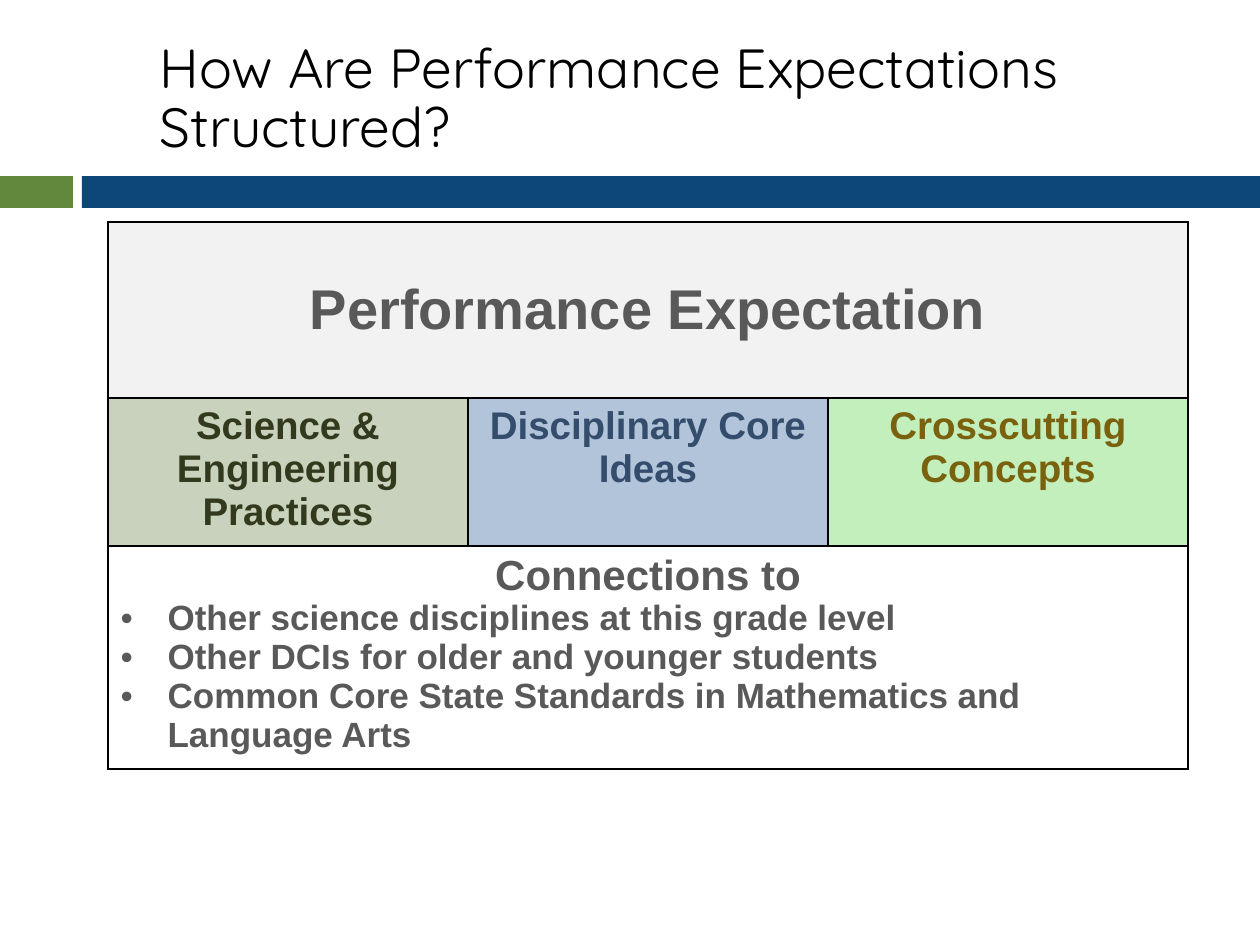
from lxml.etree import SubElement
from pptx import Presentation
from pptx.dml.color import RGBColor
from pptx.enum.shapes import MSO_SHAPE
from pptx.enum.text import MSO_ANCHOR, MSO_AUTO_SIZE, PP_ALIGN
from pptx.oxml.ns import qn
from pptx.util import Pt

PX = 914400 // 126
COLORS = {
    "title": "000000", "border": "000000", "green_bar": "61893C", "blue_bar": "0D4679",
    "text": "595959", "gray": "F2F2F2", "white": "FFFFFF",
    "practices": "C8D2BC", "practices_text": "33391C",
    "ideas": "B1C4DA", "ideas_text": "344D6C",
    "concepts": "C2EFBB", "concepts_text": "7A610D",
}
PILLARS = [
    ("Science & Engineering Practices", "practices"),
    ("Disciplinary Core Ideas", "ideas"),
    ("Crosscutting Concepts", "concepts"),
]
CONNECTIONS = [
    "Other science disciplines at this grade level",
    "Other DCIs for older and younger students",
    "Common Core State Standards in Mathematics and Language Arts",
]


def rgb(name):
    return RGBColor.from_string(COLORS[name])


def write(p, text, size, color="text", font="Arial", bold=True, align=PP_ALIGN.CENTER):
    p.alignment = align
    r = p.add_run()
    r.text = text
    r.font.size = Pt(size)
    r.font.name = font
    r.font.bold = bold
    r.font.color.rgb = rgb(color)


def add_bullet(p, indent, color="text"):
    pPr = p._p.get_or_add_pPr()
    pPr.set("marL", str(indent * PX))
    pPr.set("indent", str(-indent * PX))
    clr = SubElement(pPr, qn("a:buClr"))
    SubElement(clr, qn("a:srgbClr"), val=COLORS[color])
    SubElement(pPr, qn("a:buFont"), typeface="Arial")
    SubElement(pPr, qn("a:buChar"), char="•")


def set_borders(cell, color="border", width=1):
    tcPr = cell._tc.get_or_add_tcPr()
    for i, side in enumerate(("a:lnL", "a:lnR", "a:lnT", "a:lnB")):
        ln = tcPr.makeelement(qn(side), {"w": str(Pt(width))})
        fill = SubElement(ln, qn("a:solidFill"))
        SubElement(fill, qn("a:srgbClr"), val=COLORS[color])
        tcPr.insert(i, ln)  # borders must precede the cell fill


class SlideBuilder:
    def __init__(self, prs):
        self.slide = prs.slides.add_slide(prs.slide_layouts[5])

    def bar(self, x, y, w, h, color):
        sp = self.slide.shapes.add_shape(MSO_SHAPE.RECTANGLE, x * PX, y * PX, w * PX, h * PX)
        sp.shadow.inherit = False
        sp.fill.solid()
        sp.fill.fore_color.rgb = rgb(color)
        sp.line.fill.background()

    def title(self, text, x, y, w, h):
        sp = self.slide.shapes.title
        sp.left, sp.top, sp.width, sp.height = (v * PX for v in (x, y, w, h))
        tf = sp.text_frame
        tf.word_wrap = True
        tf.auto_size = MSO_AUTO_SIZE.NONE
        tf.vertical_anchor = MSO_ANCHOR.MIDDLE
        p = tf.paragraphs[0]
        p.line_spacing = 0.9
        write(p, text, 31.5, "title", font="Quicksand", bold=False, align=PP_ALIGN.LEFT)

    def table(self, x, y, col_width, cols, row_heights):
        table = self.slide.shapes.add_table(
            len(row_heights), cols, x * PX, y * PX,
            cols * col_width * PX, sum(row_heights) * PX).table
        for col in table.columns:
            col.width = col_width * PX
        for row, height in zip(table.rows, row_heights):
            row.height = height * PX
        for cell in table.iter_cells():
            set_borders(cell)
        return table

    def cell(self, table, row, col, fill, span=1):
        """Fill a cell, merged over span columns, and return its text frame."""
        cell = table.cell(row, col)
        if span > 1:
            cell.merge(table.cell(row, col + span - 1))
        cell.fill.solid()
        cell.fill.fore_color.rgb = rgb(fill)
        cell.vertical_anchor = MSO_ANCHOR.MIDDLE if row == 0 else MSO_ANCHOR.TOP
        return cell.text_frame


def main():
    prs = Presentation()
    prs.slide_width, prs.slide_height = 1260 * PX, 945 * PX
    s = SlideBuilder(prs)
    s.bar(0, 176, 73, 32, "green_bar")
    s.bar(82, 176, 1178, 32, "blue_bar")
    s.title("How Are Performance Expectations Structured?", 147, 32, 1061, 136)

    table = s.table(108, 222, 360, len(PILLARS), [176, 148, 223])
    tf = s.cell(table, 0, 0, "gray", span=3)
    write(tf.paragraphs[0], "Performance Expectation", 32)
    for col, (text, color) in enumerate(PILLARS):
        tf = s.cell(table, 1, col, color)
        write(tf.paragraphs[0], text, 22, color + "_text")
    tf = s.cell(table, 2, 0, "white", span=3)
    write(tf.paragraphs[0], "Connections to", 24)
    for text in CONNECTIONS:
        p = tf.add_paragraph()
        add_bullet(p, 47)
        write(p, text, 20, align=PP_ALIGN.LEFT)

    prs.save("out.pptx")


if __name__ == "__main__":
    main()
